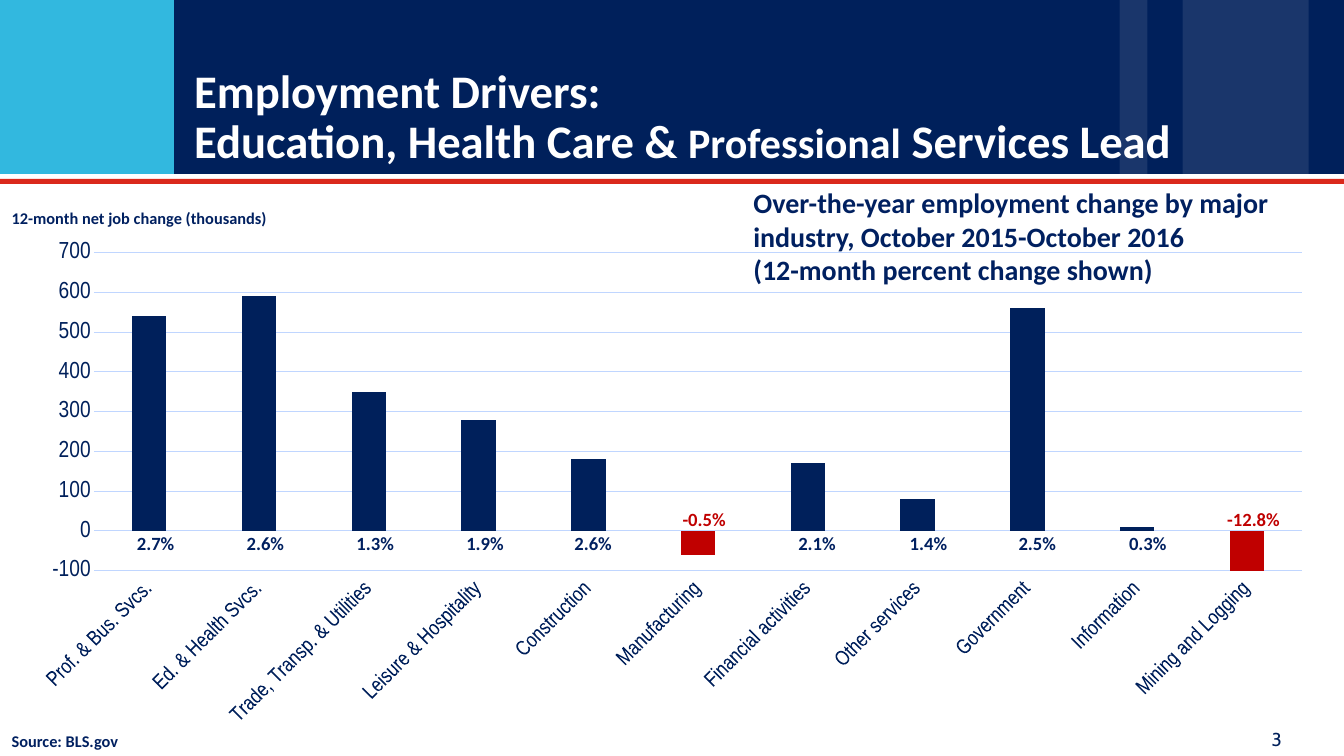
"""Build the employment drivers slide with its column chart."""
import lxml.etree
import pptx
import pptx.chart.data
import pptx.dml.color
import pptx.enum.chart
import pptx.enum.shapes
import pptx.enum.text
import pptx.oxml.ns
import pptx.util

Cm, Pt = pptx.util.Cm, pptx.util.Pt
qn = pptx.oxml.ns.qn

NAVY, INK, RED, WHITE, GRID = "00205B", "002060", "C00000", "FFFFFF", "C0D6FF"

BANDS = [
    ((0, 0, 40.64, 5.26), NAVY, 100),
    ((0, 0, 5.26, 5.26), "32B8DF", 100),
    ((35.76, 0, 3.81, 5.26), WHITE, 10),
    ((33.86, 0, 0.84, 5.26), WHITE, 10),
    ((0, 5.41, 40.64, 0.15), "DA291C", 100),
]

# name, jobs in thousands, percent change, label nudge in cm
ROWS = [
    ("Prof. & Bus. Svcs.", 540, "2.7%", 0),
    ("Ed. & Health Svcs.", 590, "2.6%", 0),
    ("Trade, Transp. & Utilities", 350, "1.3%", 0),
    ("Leisure & Hospitality", 280, "1.9%", 0),
    ("Construction", 180, "2.6%", -0.05),
    ("Manufacturing", -60, "-0.5%", -0.1),
    ("Financial activities", 170, "2.1%", 0.08),
    ("Other services", 80, "1.4%", 0.13),
    ("Government", 560, "2.5%", 0.1),
    ("Information", 10, "0.3%", 0.12),
    ("Mining and Logging", -100, "-12.8%", -0.23),
]

TITLE = [
    [("Employment Drivers:", 40)],
    [("Education, Health Care & ", 40), ("Professional", 36), (" Services Lead", 40)],
]
NOTES = [
    ((0.05, 21.95, 5.54, 0.91), [[("Source: BLS.gov", 14)]]),
    ((22.48, 5.46, 17.12, 3.38), [
        [("Over-the-year employment change by major industry, October 2015-October 2016", 24)],
        [("(12-month percent change shown)", 24)],
    ]),
    ((0.05, 6.15, 14.83, 1.27), [[("12-month net job change (thousands)", 14)]]),
]
CHART = (1.04, 7.29, 38.56, 14.66)
PLOT = {"x": 0.047, "y": 0.024, "w": 0.947, "h": 0.659}
LEFT, STEP = 3.84, 3.32


def tint(hue):
    return pptx.dml.color.RGBColor.from_string(hue)


def place(box):
    return [Cm(n) for n in box]


def style(font, size, hue, face, bold=False):
    font.size, font.name, font.bold = Pt(size), face, bold
    font.color.rgb = tint(hue)


def band(slide, box, hue, alpha):
    rect = slide.shapes.add_shape(pptx.enum.shapes.MSO_SHAPE.RECTANGLE, *place(box))
    rect.shadow.inherit = False
    rect.line.fill.background()
    rect.fill.solid()
    rect.fill.fore_color.rgb = tint(hue)
    if alpha < 100:
        tone = rect.fill._xPr.find(".//" + qn("a:srgbClr"))
        lxml.etree.SubElement(tone, qn("a:alpha"), val=str(alpha * 1000))


def text(slide, box, lines, hue=INK, face="Calibri", bold=True, pad=(0.3, 0.15)):
    frame = slide.shapes.add_textbox(*place(box)).text_frame
    frame.word_wrap = True
    frame.margin_left = frame.margin_right = Cm(pad[0])
    frame.margin_top = frame.margin_bottom = Cm(pad[1])
    para = frame.paragraphs[0]
    for row, line in enumerate(lines):
        if row:
            para.add_line_break()
        for words, size in line:
            run = para.add_run()
            run.text = words
            style(run.font, size, hue, face, bold)
    return frame


def rule(line):
    line.color.rgb = tint(GRID)
    line.width = Pt(0.75)


def draw(slide):
    data = pptx.chart.data.CategoryChartData()
    data.categories = [row[0] for row in ROWS]
    data.add_series("Series 1", [row[1] for row in ROWS])
    kind = pptx.enum.chart.XL_CHART_TYPE.COLUMN_CLUSTERED
    chart = slide.shapes.add_chart(kind, *place(CHART), data).chart
    chart.has_title = chart.has_legend = False
    style(chart.font, 10, NAVY, "Cabin")

    plot = chart.plots[0]
    plot.gap_width, plot.overlap, plot.vary_by_categories = 219, -27, False
    bars = plot.series[0]
    bars.invert_if_negative = False
    bars.format.fill.solid()
    bars.format.fill.fore_color.rgb = tint(NAVY)
    for spot, row in enumerate(ROWS):
        if row[1] < 0:
            fill = bars.points[spot].format.fill
            fill.solid()
            fill.fore_color.rgb = tint(RED)

    cats, vals = chart.category_axis, chart.value_axis
    for axis, size in ((cats, 18), (vals, 20)):
        axis.major_tick_mark = axis.minor_tick_mark = pptx.enum.chart.XL_TICK_MARK.NONE
        style(axis.tick_labels.font, size, NAVY, "Arial Narrow")
    cats.tick_label_position = pptx.enum.chart.XL_TICK_LABEL_POSITION.LOW
    cats._element.find(".//" + qn("a:bodyPr")).set("rot", "-2700000")
    rule(cats.format.line)
    vals.minimum_scale, vals.maximum_scale, vals.major_unit = -100, 700, 100
    vals.format.line.fill.background()
    vals.has_major_gridlines = True
    rule(vals.major_gridlines.format.line)

    area = chart._chartSpace.find(".//" + qn("c:plotArea"))
    for old in area.findall(qn("c:layout")):
        area.remove(old)
    layout = lxml.etree.Element(qn("c:layout"))
    area.insert(0, layout)
    manual = lxml.etree.SubElement(layout, qn("c:manualLayout"))
    parts = {"layoutTarget": "inner", "xMode": "edge", "yMode": "edge", **PLOT}
    for key, val in parts.items():
        lxml.etree.SubElement(manual, qn("c:" + key), val=str(val))


def main():
    deck = pptx.Presentation()
    deck.slide_width, deck.slide_height = Cm(40.64), Cm(22.86)
    slide = deck.slides.add_slide(deck.slide_layouts[6])
    for box, hue, alpha in BANDS:
        band(slide, box, hue, alpha)
    draw(slide)
    for box, lines in NOTES:
        text(slide, box, lines)
    head = text(slide, (5.51, 0, 33.86, 5.28), TITLE, WHITE, pad=(0.36, 0.18))
    head.vertical_anchor = pptx.enum.text.MSO_ANCHOR.BOTTOM
    head.paragraphs[0].line_spacing = 0.9
    for spot, (name, jobs, share, nudge) in enumerate(ROWS):
        top, hue = (15.22, RED) if jobs < 0 else (15.93, INK)
        box = (LEFT + STEP * spot + nudge, top, 2.4, 0.99)
        text(slide, box, [[(share, 16)]], hue)
    text(slide, (38.2, 21.87, 2.34, 0.94), [[("3", 16)]], NAVY, "Cabin", False, (0.25, 0.13))
    deck.save("out.pptx")


if __name__ == "__main__":
    main()
